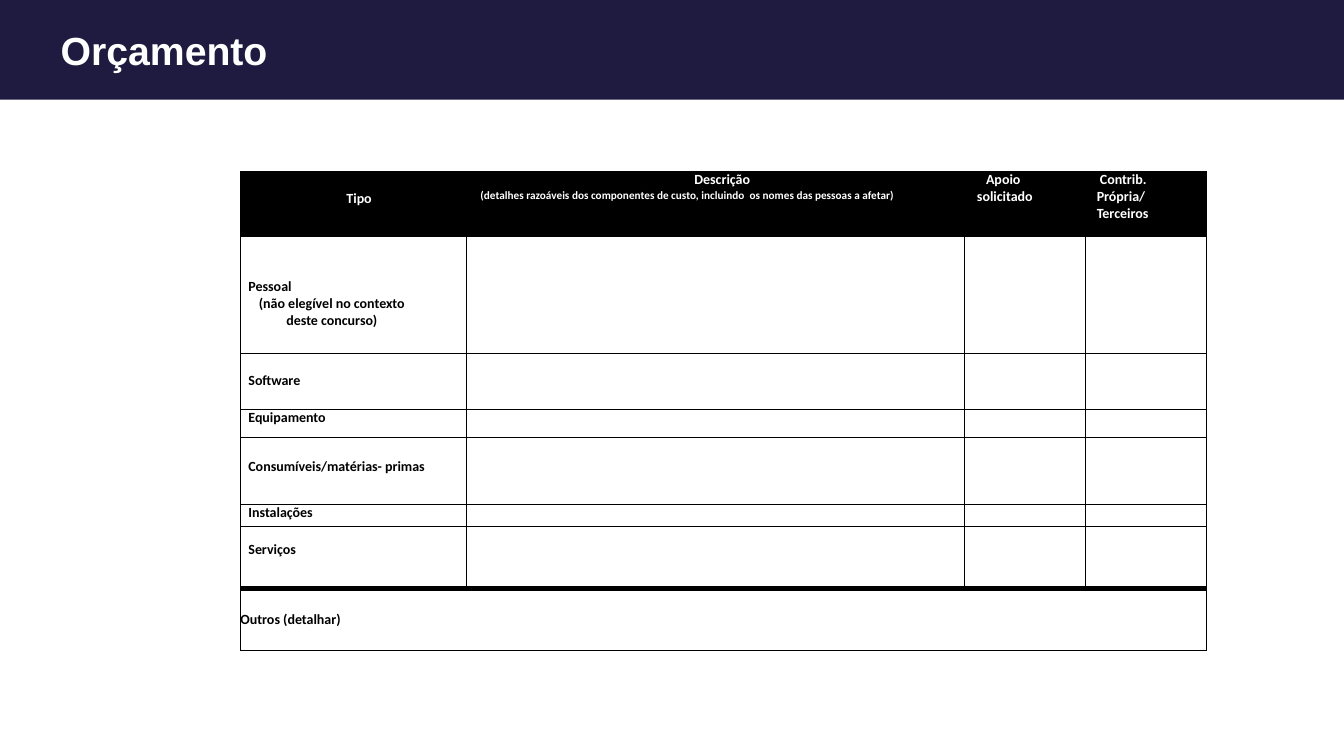
from dataclasses import dataclass

from lxml import etree
from pptx import Presentation
from pptx.dml.color import RGBColor
from pptx.enum.shapes import MSO_SHAPE
from pptx.enum.text import MSO_ANCHOR, MSO_AUTO_SIZE, PP_ALIGN
from pptx.oxml.ns import qn
from pptx.slide import Slide
from pptx.table import Table, _Cell
from pptx.util import Cm, Pt

RECTANGLE = MSO_SHAPE.RECTANGLE
TOP, MIDDLE = MSO_ANCHOR.TOP, MSO_ANCHOR.MIDDLE
LEFT, CENTER = PP_ALIGN.LEFT, PP_ALIGN.CENTER
NO_AUTOFIT = MSO_AUTO_SIZE.NONE

NAVY = RGBColor(0x1F, 0x1B, 0x40)
BLACK = RGBColor(0, 0, 0)
WHITE = RGBColor(0xFF, 0xFF, 0xFF)

SLIDE_WIDTH, SLIDE_HEIGHT = Cm(33.87), Cm(19.05)
THIN, THICK = Pt(0.5), Pt(4)
BODY_SIZE = 10
COLUMN_WIDTHS = (5.7, 12.53, 3.05, 3.05)
HEADER_HEIGHT = 1.63


@dataclass(frozen=True)
class Line:
    text: str
    size: float = BODY_SIZE
    alignment: PP_ALIGN = LEFT
    indent: float = 0


@dataclass(frozen=True)
class CellText:
    lines: tuple[Line, ...]
    left: float = 0.2
    right: float = 0
    top: float = 0
    anchor: MSO_ANCHOR = TOP


@dataclass(frozen=True)
class CostRow:
    height: float
    label: CellText


HEADERS = (
    CellText((Line("Tipo", alignment=CENTER),), left=1.63, right=1.35, top=0.48),
    CellText(
        (
            Line("Descrição", alignment=CENTER),
            Line(
                "(detalhes razoáveis dos componentes de custo, incluindo  os nomes das pessoas a afetar)",
                size=8,
            ),
        ),
        left=0.35,
    ),
    CellText((Line("Apoio solicitado", indent=0.23),), left=0.33, right=0.5),
    CellText((Line("Contrib. Própria/ Terceiros", indent=0.08),), left=0.3, right=0.75),
)

COST_ROWS = (
    CostRow(
        2.95,
        CellText(
            (
                Line("Pessoal"),
                Line("(não elegível no contexto deste concurso)", alignment=CENTER),
            ),
            right=1.3,
            top=0.47,
            anchor=MIDDLE,
        ),
    ),
    CostRow(1.41, CellText((Line("Software"),), anchor=MIDDLE)),
    CostRow(0.72, CellText((Line("Equipamento"),))),
    CostRow(1.67, CellText((Line("Consumíveis/matérias- primas"),), top=0.52)),
    CostRow(0.57, CellText((Line("Instalações"),))),
    CostRow(1.55, CellText((Line("Serviços"),), top=0.38)),
    CostRow(1.58, CellText((Line("Outros (detalhar)"),), left=0, anchor=MIDDLE)),
)


def add_title_bar(slide: Slide) -> None:
    bar = slide.shapes.add_shape(RECTANGLE, 0, 0, SLIDE_WIDTH, Cm(2.51))
    bar.shadow.inherit = False
    bar.fill.solid()
    bar.fill.fore_color.rgb = NAVY
    bar.line.fill.background()
    title = slide.shapes.title
    title._element.addprevious(bar._element)
    title.left, title.top, title.width, title.height = Cm(1.2), Cm(0.63), Cm(6.53), Cm(1.38)
    frame = title.text_frame
    frame.text = "Orçamento"
    frame.auto_size = NO_AUTOFIT
    frame.vertical_anchor = MIDDLE
    frame.margin_left = frame.margin_right = Cm(0.33)
    frame.margin_top = frame.margin_bottom = Cm(0.18)
    paragraph = frame.paragraphs[0]
    paragraph.alignment = LEFT
    paragraph.line_spacing = 0.9
    font = paragraph.font
    font.name, font.size, font.bold = "Arial", Pt(28), True
    font.color.rgb = WHITE


def set_borders(cell: _Cell, top: int, bottom: int) -> None:
    properties = cell._tc.get_or_add_tcPr()
    for tag, width in (("a:lnL", THIN), ("a:lnR", THIN), ("a:lnT", top), ("a:lnB", bottom)):
        border = etree.SubElement(properties, qn(tag), w=str(width))
        fill = etree.SubElement(border, qn("a:solidFill"))
        etree.SubElement(fill, qn("a:srgbClr"), val=str(BLACK))


def style_cell(cell: _Cell, fill: RGBColor, top: int, bottom: int) -> None:
    set_borders(cell, top, bottom)
    cell.fill.solid()
    cell.fill.fore_color.rgb = fill
    cell.margin_left = cell.margin_right = cell.margin_top = cell.margin_bottom = 0
    end_properties = cell.text_frame.paragraphs[0]._p.get_or_add_endParaRPr()
    end_properties.set("sz", str(BODY_SIZE * 100))


def write_cell(cell: _Cell, content: CellText, color: RGBColor) -> None:
    cell.margin_left, cell.margin_right = Cm(content.left), Cm(content.right)
    cell.margin_top = Cm(content.top)
    cell.vertical_anchor = content.anchor
    frame = cell.text_frame
    frame.text = "\n".join(line.text for line in content.lines)
    for paragraph, line in zip(frame.paragraphs, content.lines):
        paragraph.alignment = line.alignment
        paragraph._p.get_or_add_pPr().set("indent", str(Cm(line.indent)))
        font = paragraph.font
        font.name, font.size, font.bold = "Calibri", Pt(line.size), True
        font.color.rgb = color


def add_budget_table(slide: Slide) -> Table:
    heights = (HEADER_HEIGHT, *(row.height for row in COST_ROWS))
    table = slide.shapes.add_table(
        len(heights), len(COLUMN_WIDTHS), Cm(6.06), Cm(4.32),
        Cm(sum(COLUMN_WIDTHS)), Cm(sum(heights)),
    ).table
    table.first_row = table.horz_banding = False
    for column, width in zip(table.columns, COLUMN_WIDTHS):
        column.width = Cm(width)
    last = len(heights) - 1
    for index, (row, height) in enumerate(zip(table.rows, heights)):
        row.height = Cm(height)
        for cell in row.cells:
            style_cell(
                cell,
                fill=WHITE if index else BLACK,
                top=THICK if index == last else THIN,
                bottom=THICK if index == last - 1 else THIN,
            )
    table.cell(last, 0).merge(table.cell(last, len(COLUMN_WIDTHS) - 1))
    for column_index, header in enumerate(HEADERS):
        write_cell(table.cell(0, column_index), header, WHITE)
    for row_index, cost_row in enumerate(COST_ROWS, start=1):
        write_cell(table.cell(row_index, 0), cost_row.label, BLACK)
    return table


def main() -> None:
    presentation = Presentation()
    presentation.slide_width, presentation.slide_height = SLIDE_WIDTH, SLIDE_HEIGHT
    slide = presentation.slides.add_slide(presentation.slide_layouts[5])
    add_title_bar(slide)
    add_budget_table(slide)
    presentation.save("out.pptx")


if __name__ == "__main__":
    main()
